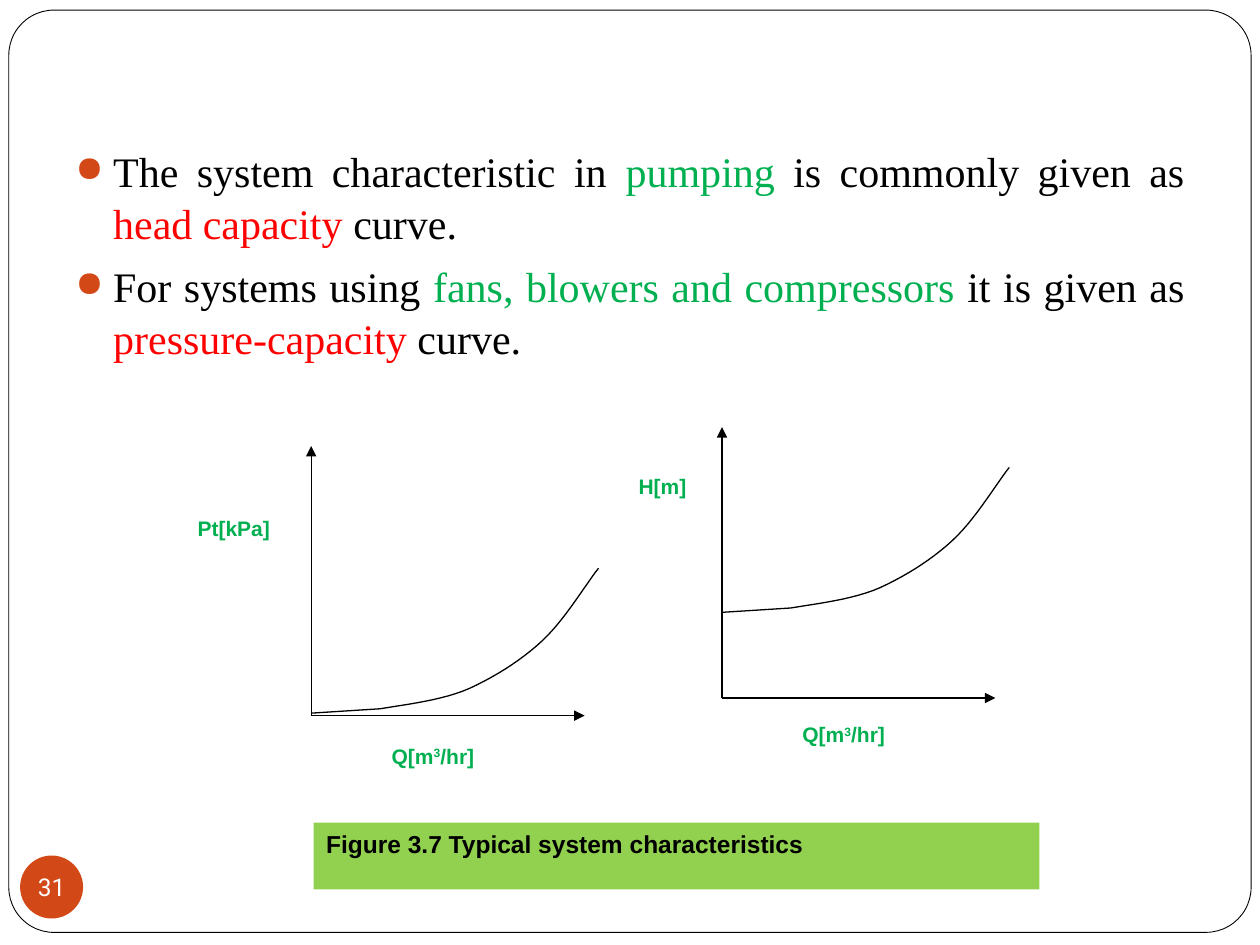
from dataclasses import dataclass

from lxml.etree import SubElement
from pptx import Presentation
from pptx.dml.color import RGBColor
from pptx.enum.shapes import MSO_CONNECTOR, MSO_SHAPE
from pptx.enum.text import MSO_ANCHOR, PP_ALIGN
from pptx.oxml.ns import qn
from pptx.util import Inches, Pt

COLUMNS, ROWS = 100, 75
SLIDE_WIDTH, SLIDE_HEIGHT = Inches(10), Inches(7.5)


@dataclass(frozen=True)
class Theme:
    black: str = "000000"
    white: str = "FFFFFF"
    green: str = "00B050"
    red: str = "FF0000"
    orange: str = "D34817"
    lime: str = "92D050"
    body_font: str = "Times New Roman"
    label_font: str = "Arial"
    number_font: str = "Roboto"
    body_size: float = 24
    caption_size: float = 14
    label_size: float = 12
    frame_line: float = 0.5
    plot_line: float = 0.75


THEME = Theme()


@dataclass(frozen=True)
class Box:
    column: float
    row: float
    columns: float
    rows: float

    def inside(self, column, row, columns, rows):
        return Box(self.column + column, self.row + row, columns, rows)

    def point(self, across, down):
        return (
            int((self.column + across * self.columns) * SLIDE_WIDTH / COLUMNS),
            int((self.row + down * self.rows) * SLIDE_HEIGHT / ROWS),
        )

    def place(self):
        left, top = self.point(0, 0)
        right, bottom = self.point(1, 1)
        return left, top, right - left, bottom - top


def color(value):
    return RGBColor.from_string(value)


def add_runs(paragraph, parts, font, size, bold=False):
    for text, value in parts:
        run = paragraph.add_run()
        run.text = text
        run.font.name = font
        run.font.size = Pt(size)
        run.font.bold = bold
        run.font.color.rgb = color(value)


def add_filled_shape(slide, kind, box, fill, line=None):
    shape = slide.shapes.add_shape(kind, *box.place())
    shape.shadow.inherit = False
    shape.fill.solid()
    shape.fill.fore_color.rgb = color(fill)
    if line:
        shape.line.color.rgb = color(line)
        shape.line.width = Pt(THEME.frame_line)
    else:
        shape.line.fill.background()
    return shape


def add_frame(slide, box):
    frame = add_filled_shape(slide, MSO_SHAPE.ROUNDED_RECTANGLE, box, THEME.white, THEME.black)
    frame.adjustments[0] = 0.049


def add_slide_number(slide, box, number):
    badge = add_filled_shape(slide, MSO_SHAPE.OVAL, box, THEME.orange)
    text_frame = badge.text_frame
    text_frame.margin_left = text_frame.margin_right = 0
    text_frame.margin_top = text_frame.margin_bottom = 0
    text_frame.word_wrap = False
    text_frame.vertical_anchor = MSO_ANCHOR.MIDDLE
    paragraph = text_frame.paragraphs[0]
    paragraph.alignment = PP_ALIGN.CENTER
    add_runs(paragraph, [(number, THEME.white)], THEME.number_font, THEME.caption_size)


def add_bullet(paragraph):
    properties = paragraph._p.get_or_add_pPr()
    properties.set("marL", str(Inches(0.3)))
    properties.set("indent", str(Inches(-0.3)))
    bullet_color = SubElement(properties, qn("a:buClr"))
    SubElement(bullet_color, qn("a:srgbClr"), val=THEME.orange)
    SubElement(properties, qn("a:buSzPct"), val="85000")
    SubElement(properties, qn("a:buChar"), char="●")


def add_body(slide, box, items):
    text_frame = slide.shapes.add_textbox(*box.place()).text_frame
    text_frame.word_wrap = True
    for index, parts in enumerate(items):
        paragraph = text_frame.add_paragraph() if index else text_frame.paragraphs[0]
        paragraph.alignment = PP_ALIGN.JUSTIFY
        paragraph.space_before = Pt(5.8)
        paragraph.line_spacing = 1.04
        add_bullet(paragraph)
        add_runs(paragraph, parts, THEME.body_font, THEME.body_size)


def add_label(slide, box, texts):
    text_frame = slide.shapes.add_textbox(*box.place()).text_frame
    text_frame.word_wrap = True
    paragraph = text_frame.paragraphs[0]
    parts = [(text, THEME.green) for text in texts]
    add_runs(paragraph, parts, THEME.label_font, THEME.label_size, bold=True)
    for run in paragraph.runs[1:2]:
        run._r.get_or_add_rPr().set("baseline", "30000")


def add_axis(slide, start, end):
    axis = slide.shapes.add_connector(MSO_CONNECTOR.STRAIGHT, *start, *end)
    axis.line.color.rgb = color(THEME.black)
    axis.line.width = Pt(THEME.plot_line)
    SubElement(axis.line._get_or_add_ln(), qn("a:tailEnd"), type="triangle")
    SubElement(axis._element.spPr, qn("a:effectLst"))


def bezier_points(start, first, second, end, steps=12):
    for step in range(1, steps + 1):
        t = step / steps
        weights = ((1 - t) ** 3, 3 * t * (1 - t) ** 2, 3 * t * t * (1 - t), t ** 3)
        yield tuple(
            sum(weight * value for weight, value in zip(weights, values))
            for values in zip(start, first, second, end)
        )


def add_curve(slide, box):
    knots = [
        (0.24, 0.97), (0.33, 0.94), (0.46, 0.91), (0.55, 0.83),
        (0.65, 0.74), (0.75, 0.61), (0.82, 0.47),
        (0.89, 0.33), (0.96, 0.1), (1, 0),
    ]
    points = [knots[0]]
    for index in range(0, len(knots) - 1, 3):
        points.extend(bezier_points(*knots[index:index + 4]))
    builder = slide.shapes.build_freeform(*box.point(0, 1))
    builder.add_line_segments([box.point(*point) for point in points], close=False)
    curve = builder.convert_to_shape()
    curve.shadow.inherit = False
    curve.fill.background()
    curve.line.color.rgb = color(THEME.black)
    curve.line.width = Pt(THEME.plot_line)


def add_plot(slide, box, curve_row, vertical_text, vertical_box, horizontal_row):
    origin = box.point(0, 1)
    add_axis(slide, origin, box.point(0, 0))
    add_axis(slide, origin, box.point(1, 1))
    add_curve(slide, box.inside(0, curve_row, 22.8, 11.5))
    add_label(slide, box.inside(*vertical_box), [vertical_text])
    add_label(slide, box.inside(5.4, horizontal_row, 13, 6.6), ["Q[m", "3", "/hr]"])


def add_caption(slide, box, text):
    caption = add_filled_shape(slide, MSO_SHAPE.RECTANGLE, box, THEME.lime)
    caption.text_frame.vertical_anchor = MSO_ANCHOR.TOP
    paragraph = caption.text_frame.paragraphs[0]
    paragraph.alignment = PP_ALIGN.LEFT
    add_runs(paragraph, [(text, THEME.black)], THEME.label_font, THEME.caption_size, bold=True)


def main():
    presentation = Presentation()
    presentation.slide_width, presentation.slide_height = SLIDE_WIDTH, SLIDE_HEIGHT
    slide = presentation.slides.add_slide(presentation.slide_layouts[6])
    add_frame(slide, Box(0.7, 0.8, 98.6, 73.2))
    add_slide_number(slide, Box(1.6, 67.9, 5, 5), "31")
    add_body(slide, Box(5, 10.9, 90, 56.1), [
        [("The system characteristic in ", THEME.black), ("pumping", THEME.green),
         (" is commonly given as ", THEME.black), ("head capacity ", THEME.red),
         ("curve. ", THEME.black)],
        [("For systems using ", THEME.black), ("fans, blowers and compressors", THEME.green),
         (" it is given as ", THEME.black), ("pressure-capacity ", THEME.red),
         ("curve. ", THEME.black)],
    ])
    add_plot(slide, Box(24.7, 35.4, 21.7, 21.4), 9.7, "Pt[kPa]", (-10, 5, 11.1, 6.6), 23.1)
    add_plot(slide, Box(57.3, 33.9, 21.7, 21.5), 3.2, "H[m]", (-7.6, 3.2, 8.7, 6.6), 22.9)
    add_caption(slide, Box(24.9, 65.3, 57.6, 5.3), "Figure 3.7 Typical system characteristics")
    presentation.save("out.pptx")


if __name__ == "__main__":
    main()
